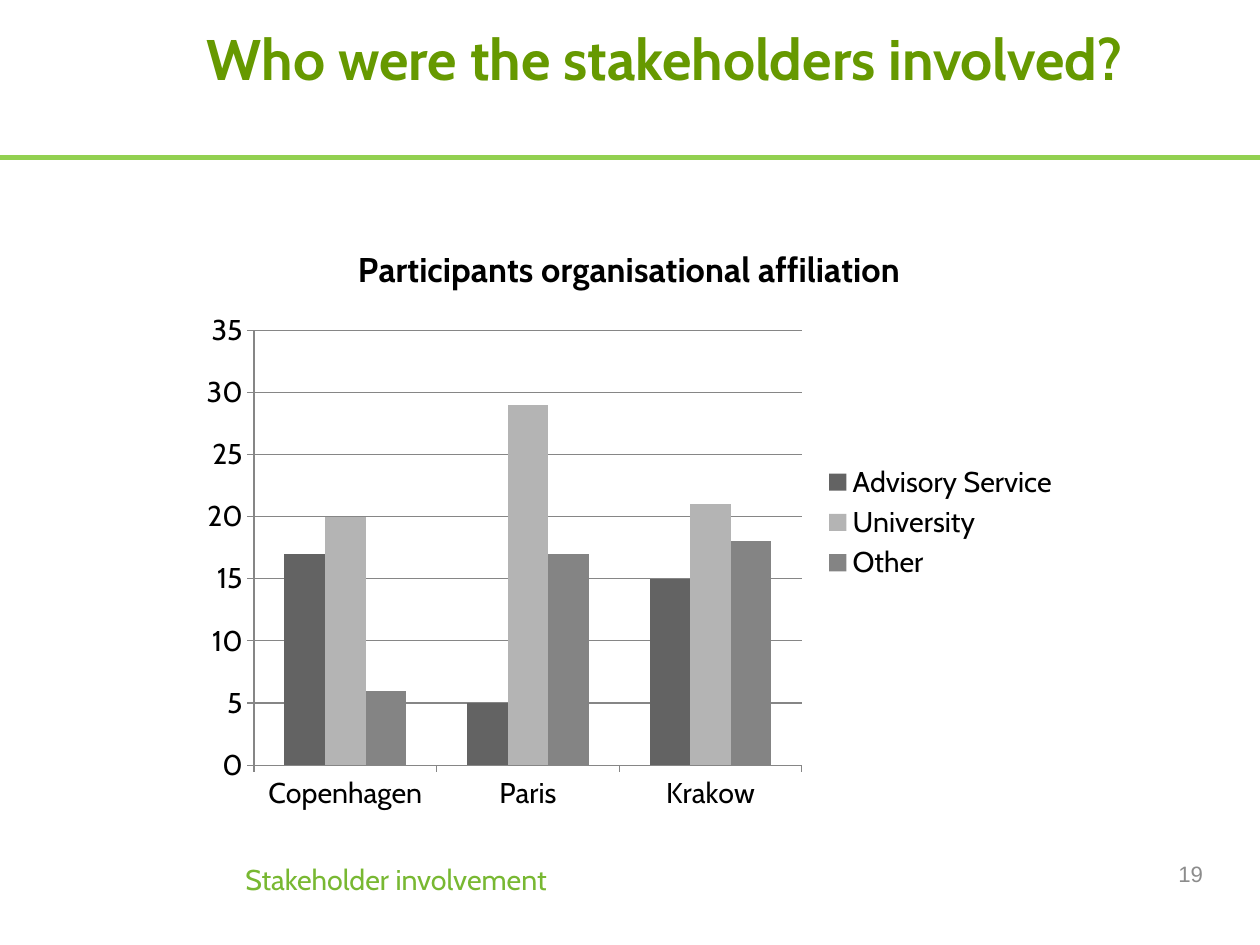
import pptx
import pptx.chart.data
import pptx.dml.color
import pptx.enum.chart
import pptx.enum.shapes
import pptx.enum.text
import pptx.oxml
import pptx.oxml.ns
import pptx.util
from pptx.util import Pt

SLIDE_WIDTH, SLIDE_HEIGHT = 793.75, 595.25
BODY_FONT = "Cabin"
AXIS_GREY = "868686"

CHART_BOX = (118.8, 139, 555.8, 380.2)
PLOT_BOX = (160, 208, 345.2, 274)
CITIES = ["Copenhagen", "Paris", "Krakow"]
PARTICIPANTS = [
    ("Advisory Service", (17, 5, 15), "636363"),
    ("University", (20, 29, 21), "B4B4B4"),
    ("Other", (6, 17, 18), "848484"),
]


def color(hex_string):
    return pptx.dml.color.RGBColor.from_string(hex_string)


def style_font(font, size, hex_string, name=BODY_FONT, bold=False):
    font.size = Pt(size)
    font.name = name
    font.bold = bold
    font.color.rgb = color(hex_string)


def style_line(line, hex_string, width):
    line.color.rgb = color(hex_string)
    line.width = Pt(width)


def add_rule(slide, y, hex_string, width):
    """Draw a horizontal line across the whole slide."""
    rule = slide.shapes.add_connector(
        pptx.enum.shapes.MSO_CONNECTOR.STRAIGHT, 0, Pt(y), Pt(SLIDE_WIDTH), Pt(y))
    style_line(rule.line, hex_string, width)
    rule._element.spPr.append(
        pptx.oxml.parse_xml(f'<a:effectLst {pptx.oxml.ns.nsdecls("a")}/>'))


def add_text(slide, box, text, size, hex_string, name=BODY_FONT, bold=False,
             align="LEFT", anchor="TOP", spacing=1.0, wrap=True, inset=None):
    text_box = slide.shapes.add_textbox(*map(Pt, box))
    frame = text_box.text_frame
    frame.word_wrap = wrap
    frame.vertical_anchor = getattr(pptx.enum.text.MSO_ANCHOR, anchor)
    if inset is not None:
        frame.margin_left = frame.margin_right = Pt(inset)
        frame.margin_top = frame.margin_bottom = Pt(inset)
    paragraph = frame.paragraphs[0]
    paragraph.text = text
    paragraph.alignment = getattr(pptx.enum.text.PP_ALIGN, align)
    paragraph.line_spacing = spacing
    style_font(paragraph.font, size, hex_string, name, bold)


def place_plot_area(chart, chart_box, plot_box):
    """Fix the inner plot area; both boxes are in points on the slide."""
    left, top, width, height = chart_box
    x, y, plot_width, plot_height = plot_box
    fractions = {"x": (x - left) / width, "y": (y - top) / height,
                 "w": plot_width / width, "h": plot_height / height}
    values = "".join(f'<c:{tag} val="{value:.4f}"/>' for tag, value in fractions.items())
    plot_area = chart._chartSpace.chart.plotArea
    for layout in plot_area.findall(pptx.oxml.ns.qn("c:layout")):
        plot_area.remove(layout)
    plot_area.insert(0, pptx.oxml.parse_xml(
        f'<c:layout {pptx.oxml.ns.nsdecls("c")}><c:manualLayout>'
        '<c:layoutTarget val="inner"/><c:xMode val="edge"/><c:yMode val="edge"/>'
        f'{values}</c:manualLayout></c:layout>'))


def add_column_chart(slide, box, title, categories, series_rows):
    data = pptx.chart.data.CategoryChartData()
    data.categories = categories
    for name, values, _ in series_rows:
        data.add_series(name, values)
    chart = slide.shapes.add_chart(
        pptx.enum.chart.XL_CHART_TYPE.COLUMN_CLUSTERED, *map(Pt, box), data).chart
    style_font(chart.font, 18, "000000")

    chart.has_title = True
    chart.chart_title.include_in_layout = False
    heading = chart.chart_title.text_frame.paragraphs[0]
    heading.text = title
    style_font(heading.font, 21.6, "000000", bold=True)

    chart.has_legend = True
    chart.legend.position = pptx.enum.chart.XL_LEGEND_POSITION.RIGHT
    chart.legend.include_in_layout = False

    plot = chart.plots[0]
    plot.gap_width = 150
    plot.overlap = 0
    plot.vary_by_categories = False
    for series, (_, _, hex_string) in zip(plot.series, series_rows):
        series.format.fill.solid()
        series.format.fill.fore_color.rgb = color(hex_string)

    for axis in (chart.category_axis, chart.value_axis):
        axis.major_tick_mark = pptx.enum.chart.XL_TICK_MARK.OUTSIDE
        axis.minor_tick_mark = pptx.enum.chart.XL_TICK_MARK.NONE
        style_line(axis.format.line, AXIS_GREY, 0.75)
    value_axis = chart.value_axis
    value_axis.minimum_scale, value_axis.maximum_scale = 0, 35
    value_axis.major_unit = 5
    value_axis.has_major_gridlines = True
    style_line(value_axis.major_gridlines.format.line, AXIS_GREY, 0.75)
    return chart


def main():
    presentation = pptx.Presentation()
    presentation.slide_width = Pt(SLIDE_WIDTH)
    presentation.slide_height = Pt(SLIDE_HEIGHT)
    slide = presentation.slides.add_slide(presentation.slide_layouts[6])

    add_rule(slide, 99.25, "92D050", 3)
    add_text(slide, (130.3, 14.4, 626.4, 99.4), "Who were the stakeholders involved?",
             36, "669900", bold=True, spacing=1.01, inset=0)
    add_text(slide, (580, 534.5, 185, 31.7), "19", 14, "8C8C8C",
             name="Arial", align="RIGHT", anchor="MIDDLE")
    chart = add_column_chart(slide, CHART_BOX, "Participants organisational affiliation",
                             CITIES, PARTICIPANTS)
    place_plot_area(chart, CHART_BOX, PLOT_BOX)
    add_text(slide, (147.5, 541.2, 211.7, 27.4), "Stakeholder involvement",
             18, "78B832", spacing=0.93, wrap=False)

    presentation.save("out.pptx")


if __name__ == "__main__":
    main()
